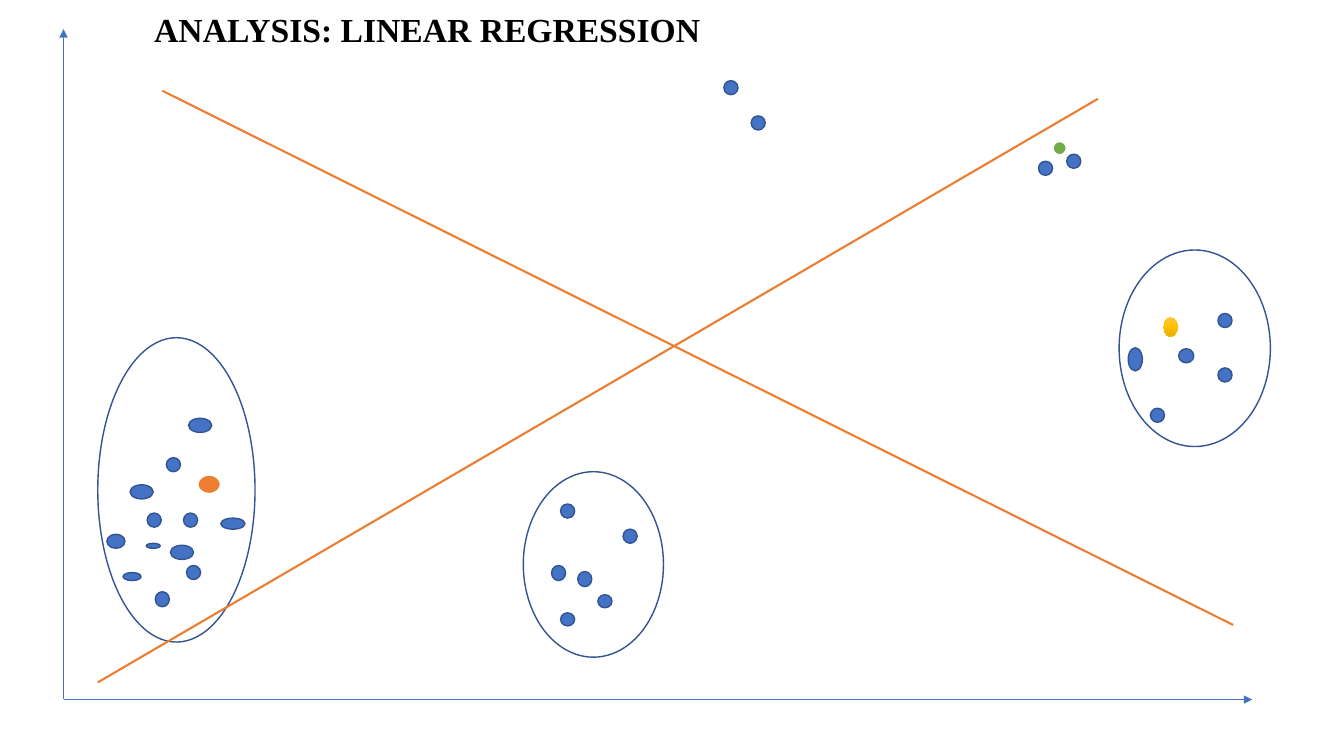
from copy import deepcopy
from dataclasses import dataclass

from lxml.etree import SubElement
from pptx import Presentation
from pptx.dml.color import RGBColor
from pptx.enum.shapes import MSO_CONNECTOR, MSO_SHAPE
from pptx.enum.text import MSO_AUTO_SIZE
from pptx.oxml.ns import qn
from pptx.util import Inches, Pt


@dataclass(frozen=True)
class Theme:
    """Colours, font, type size and line widths of the slide."""
    point: str = "4472C4"
    outline: str = "325491"
    trend: str = "ED7D31"
    green: str = "70AD47"
    gold: str = "FFC000"
    gold_stops: tuple = ((0, "FFC64B"), (0.5, "FFC000"), (1, "E3AB00"))
    white: str = "FFFFFF"
    ink: str = "000000"
    font: str = "Times New Roman"
    title_size: float = 24
    hairline: float = 0.5
    thin: float = 1
    medium: float = 1.5


THEME = Theme()
DOT = 0.14

CLUSTERS = [
    (11.1, 2.48, 1.5, 1.95),
    (5.19, 4.68, 1.39, 1.84),
    (0.97, 3.35, 1.56, 3.02),
]
ROUND_POINTS = [
    (1.85, 5.61), (1.82, 5.09), (1.65, 4.54), (1.46, 5.09),
    (6.18, 5.25), (5.56, 5), (10.3, 1.6), (10.58, 1.53),
    (11.41, 4.05), (12.08, 3.11), (12.08, 3.65), (7.18, 0.8), (7.45, 1.15),
]
OVAL_POINTS = [
    (1.45, 5.39, 0.14, 0.05), (1.54, 5.87, 0.14, 0.15),
    (1.06, 5.3, 0.18, 0.14), (1.22, 5.68, 0.18, 0.08),
    (2.19, 5.14, 0.24, 0.11), (1.69, 5.41, 0.23, 0.14),
    (1.29, 4.81, 0.23, 0.14), (1.87, 4.15, 0.23, 0.14),
    (11.19, 3.45, 0.14, 0.23), (11.69, 3.46, 0.15, 0.14),
    (5.73, 5.67, 0.14, 0.15), (5.47, 5.61, 0.14, 0.15),
    (5.93, 5.9, 0.14, 0.13), (5.56, 6.08, 0.14, 0.13),
]
AXES = [((0.63, 6.94), (12.42, 6.94)), ((0.63, 6.93), (0.63, 0.29))]
TRENDS = [((0.97, 6.77), (10.89, 0.98)), ((1.61, 0.9), (12.23, 6.2))]


def add_ellipse(slide, box, fill=None, outline=THEME.outline, width=THEME.thin):
    """Add an ellipse, left hollow when no fill is given."""
    ellipse = slide.shapes.add_shape(MSO_SHAPE.OVAL, *map(Inches, box))
    ellipse.shadow.inherit = False
    if fill:
        ellipse.fill.solid()
        ellipse.fill.fore_color.rgb = RGBColor.from_string(fill)
    else:
        ellipse.fill.background()
    ellipse.line.color.rgb = RGBColor.from_string(outline)
    ellipse.line.width = Pt(width)
    return ellipse


def shade_downward(ellipse, stops):
    """Fill an ellipse with a top-to-bottom gradient of three stops."""
    ellipse.fill.gradient()
    ellipse.fill.gradient_angle = 270
    stop_list = ellipse._element.spPr.find(f".//{qn('a:gsLst')}")
    stop_list.insert(1, deepcopy(stop_list[0]))
    for stop, (position, color) in zip(ellipse.fill.gradient_stops, stops):
        stop.position = position
        stop.color.rgb = RGBColor.from_string(color)


def add_line(slide, start, end, color, width, arrow=False):
    """Add a straight line, optionally with an arrowhead at its end."""
    line = slide.shapes.add_connector(
        MSO_CONNECTOR.STRAIGHT, *map(Inches, (*start, *end)))
    line.line.color.rgb = RGBColor.from_string(color)
    line.line.width = Pt(width)
    if arrow:
        SubElement(line.line._get_or_add_ln(), qn("a:tailEnd"), type="triangle")
    SubElement(line._element.spPr, qn("a:effectLst"))


def add_text(slide, box, text, *, size, color, font, bold=False, inset=0.1):
    """Add a single-line text box that fits its text."""
    label = slide.shapes.add_textbox(*map(Inches, box))
    frame = label.text_frame
    frame.word_wrap = False
    frame.auto_size = MSO_AUTO_SIZE.SHAPE_TO_FIT_TEXT
    frame.margin_left = Inches(inset)
    run = frame.paragraphs[0].add_run()
    run.text = text
    run.font.size = Pt(size)
    run.font.name = font
    run.font.bold = bold
    run.font.color.rgb = RGBColor.from_string(color)


def main():
    """Build the scatter plot slide and save it."""
    deck = Presentation()
    deck.slide_width, deck.slide_height = Inches(13.33), Inches(7.5)
    slide = deck.slides.add_slide(deck.slide_layouts[6])

    for cluster in CLUSTERS:
        add_ellipse(slide, cluster)
    for start, end in AXES:
        add_line(slide, start, end, THEME.point, THEME.hairline, arrow=True)
    for point in [(*corner, DOT, DOT) for corner in ROUND_POINTS] + OVAL_POINTS:
        add_ellipse(slide, point, THEME.point)

    add_ellipse(slide, (1.96, 4.71, 0.23, 0.19),
                THEME.trend, THEME.white, THEME.medium)
    add_ellipse(slide, (10.44, 1.4, DOT, DOT),
                THEME.green, THEME.white, THEME.medium)
    gold_point = add_ellipse(slide, (11.54, 3.15, DOT, 0.19),
                             THEME.gold, THEME.gold, THEME.hairline)
    shade_downward(gold_point, THEME.gold_stops)

    add_text(slide, (1.35, 0.04, 5.83, 0.5), "ANALYSIS: LINEAR REGRESSION",
             size=THEME.title_size, color=THEME.ink, font=THEME.font,
             bold=True, inset=0.18)
    for start, end in TRENDS:
        add_line(slide, start, end, THEME.trend, THEME.medium)

    deck.save("out.pptx")


if __name__ == "__main__":
    main()
